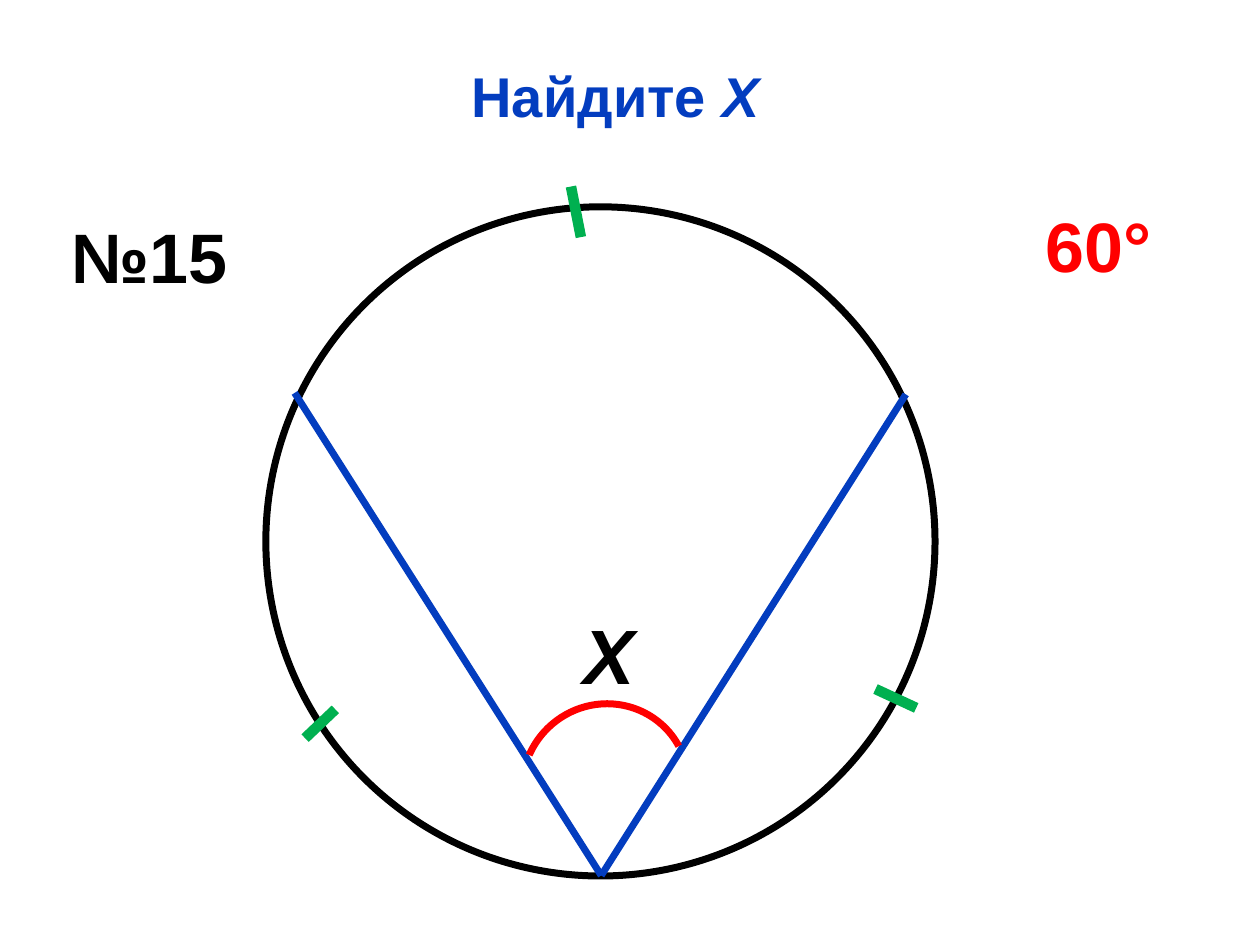
from dataclasses import dataclass

from lxml import etree
from pptx import Presentation
from pptx.dml.color import RGBColor
from pptx.enum.shapes import MSO_CONNECTOR, MSO_SHAPE
from pptx.enum.text import MSO_ANCHOR, PP_ALIGN
from pptx.oxml.ns import qn
from pptx.util import Cm, Pt

STRAIGHT = MSO_CONNECTOR.STRAIGHT
ELLIPSE, ARC = MSO_SHAPE.OVAL, MSO_SHAPE.ARC
TOP = MSO_ANCHOR.TOP
LEFT, CENTER = PP_ALIGN.LEFT, PP_ALIGN.CENTER


@dataclass(frozen=True)
class Theme:
    font: str = "Arial"
    ink: RGBColor = RGBColor(0x00, 0x00, 0x00)
    paper: RGBColor = RGBColor(0xFF, 0xFF, 0xFF)
    blue: RGBColor = RGBColor(0x03, 0x3D, 0xBF)
    red: RGBColor = RGBColor(0xFF, 0x00, 0x00)
    green: RGBColor = RGBColor(0x00, 0xB0, 0x50)
    title_size: int = 32
    label_size: int = 40
    angle_size: int = 44
    stroke: int = 4
    tick_stroke: int = 6


THEME = Theme()


@dataclass(frozen=True)
class Frame:
    """Left, top, width and height in centimetres."""
    left: float
    top: float
    width: float
    height: float

    def lengths(self) -> tuple:
        return Cm(self.left), Cm(self.top), Cm(self.width), Cm(self.height)


@dataclass(frozen=True)
class Segment:
    """Both ends in centimetres."""
    start: tuple[float, float]
    end: tuple[float, float]


@dataclass(frozen=True)
class Label:
    text: str
    frame: Frame
    size: int
    color: RGBColor
    italic: bool = False


VERTEX = (12.12, 17.65)
CHORDS = [
    Segment((5.94, 7.92), VERTEX),
    Segment(VERTEX, (18.26, 7.95)),
]
EQUAL_ARC_TICKS = [
    Segment((6.15, 14.88), (6.76, 14.3)),
    Segment((11.51, 3.76), (11.71, 4.78)),
    Segment((17.65, 13.89), (18.47, 14.27)),
]
LABELS = [
    Label("Х", Frame(11.51, 12.12, 2.39, 2.13), THEME.angle_size, THEME.ink, True),
    Label("№15", Frame(1.19, 4.17, 3.76, 1.96), THEME.label_size, THEME.ink),
    Label("60°", Frame(20.83, 3.96, 3.18, 1.96), THEME.label_size, THEME.red),
]


def add_span(para, text: str, *, size: int, color: RGBColor, italic: bool = False) -> None:
    span = para.add_run()
    span.text = text
    span.font.name = THEME.font
    span.font.size = Pt(size)
    span.font.bold = True
    span.font.italic = italic
    span.font.color.rgb = color


def add_title(page) -> None:
    box = page.shapes.title
    box.left, box.top, box.width, box.height = Frame(1.09, 1.12, 22.63, 1.6).lengths()
    box.text_frame.vertical_anchor = TOP
    para = box.text_frame.paragraphs[0]
    para.alignment = CENTER
    for text, italic in (("Найдите ", False), ("Х", True)):
        add_span(para, text, size=THEME.title_size, color=THEME.blue, italic=italic)


def add_label(page, label: Label) -> None:
    box = page.shapes.add_textbox(*label.frame.lengths())
    box.text_frame.word_wrap = True
    para = box.text_frame.paragraphs[0]
    para.alignment = LEFT
    add_span(para, label.text, size=label.size, color=label.color, italic=label.italic)


def add_segment(page, segment: Segment, *, color: RGBColor, width: int) -> None:
    ends = [Cm(value) for value in (*segment.start, *segment.end)]
    line = page.shapes.add_connector(STRAIGHT, *ends)
    line.line.color.rgb = color
    line.line.width = Pt(width)
    etree.SubElement(line._element.spPr, qn("a:effectLst"))


def add_outline(page, kind: MSO_SHAPE, frame: Frame, color: RGBColor):
    shape = page.shapes.add_shape(kind, *frame.lengths())
    shape.shadow.inherit = False
    shape.fill.background()
    shape.line.color.rgb = color
    shape.line.width = Pt(THEME.stroke)
    return shape


def main() -> None:
    deck = Presentation()
    deck.slide_width, deck.slide_height = Cm(25.4), Cm(19.05)
    page = deck.slides.add_slide(deck.slide_layouts[5])
    add_title(page)

    # Circle with the inscribed angle
    circle = add_outline(page, ELLIPSE, Frame(5.36, 4.17, 13.49, 13.49), THEME.ink)
    circle.fill.solid()
    circle.fill.fore_color.rgb = THEME.paper
    for chord in CHORDS:
        add_segment(page, chord, color=THEME.blue, width=THEME.stroke)

    # Angle mark at the vertex
    mark = add_outline(page, ARC, Frame(10.54, 14.17, 3.33, 3.4), THEME.red)
    mark.adjustments[0], mark.adjustments[1] = 204.62, 65.29
    mark.rotation = 221.9

    # Ticks on the equal arcs
    for tick in EQUAL_ARC_TICKS:
        add_segment(page, tick, color=THEME.green, width=THEME.tick_stroke)

    # Angle name, problem number and answer
    for label in LABELS:
        add_label(page, label)

    deck.save("out.pptx")


if __name__ == "__main__":
    main()
